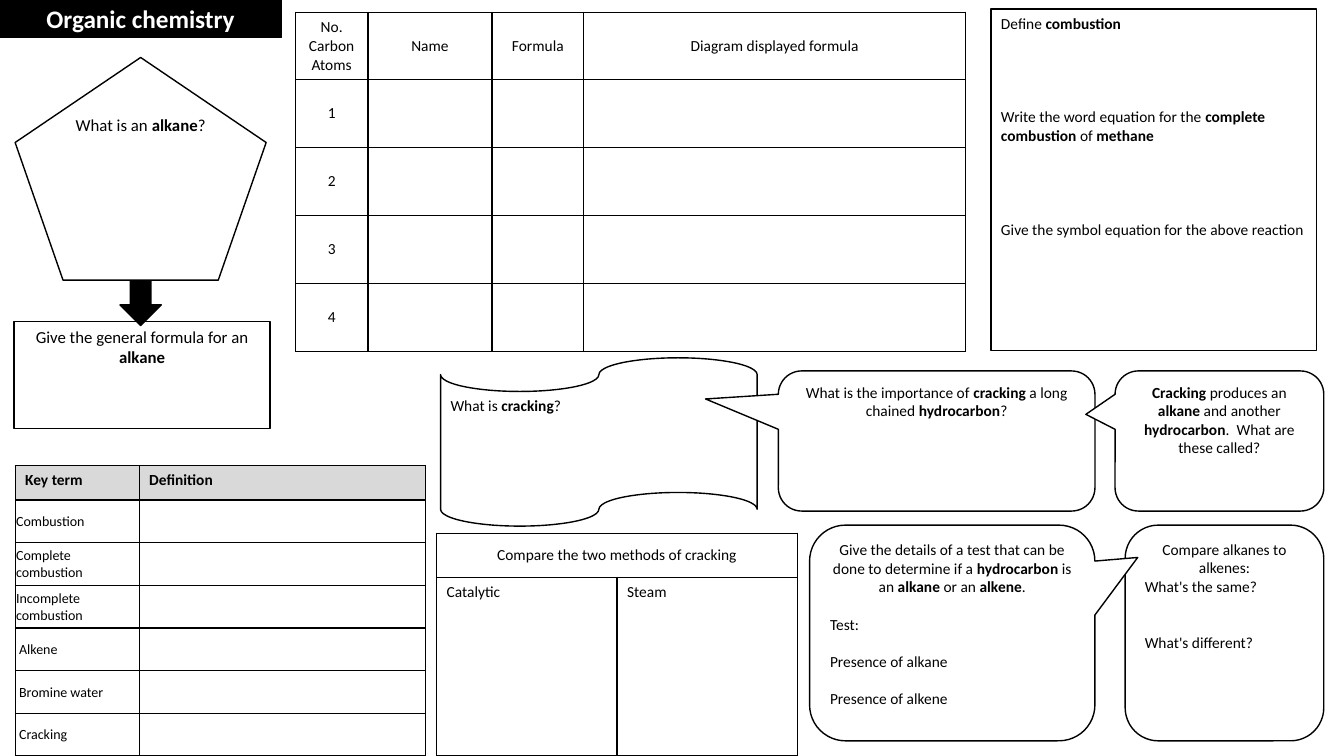
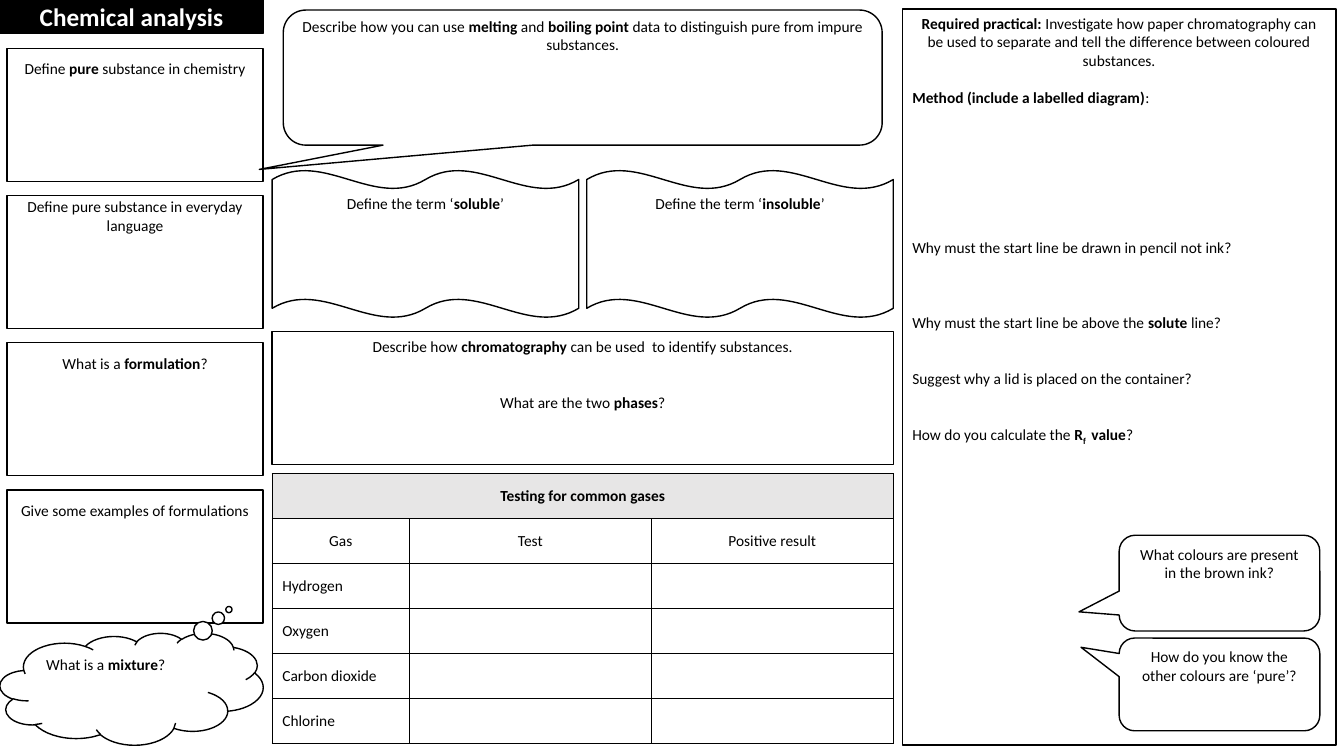
from lxml import etree
from pptx import Presentation
from pptx.dml.color import RGBColor
from pptx.enum.shapes import MSO_SHAPE
from pptx.enum.text import MSO_ANCHOR, MSO_AUTO_SIZE, PP_ALIGN
from pptx.oxml.ns import qn
from pptx.util import Inches, Pt

RECT = MSO_SHAPE.RECTANGLE
ROUND = MSO_SHAPE.ROUNDED_RECTANGLE
CALLOUT = MSO_SHAPE.ROUNDED_RECTANGULAR_CALLOUT
CLOUD = MSO_SHAPE.CLOUD_CALLOUT
WAVE = MSO_SHAPE.DOUBLE_WAVE
TAPE = MSO_SHAPE.FLOWCHART_PUNCHED_TAPE
PENTAGON = MSO_SHAPE.REGULAR_PENTAGON
ARROW = MSO_SHAPE.DOWN_ARROW
LEFT, CENTER = PP_ALIGN.LEFT, PP_ALIGN.CENTER
TOP, MIDDLE = MSO_ANCHOR.TOP, MSO_ANCHOR.MIDDLE

COLORS = {"ink": "000000", "paper": "FFFFFF", "key": "D9D9D9", "gas": "E7E6E6"}
FONT = "Calibri"
BODY = 11
ANSWER_LINE = 13.4  # points of one blank writing line
TITLE_LAYOUT = 5

# Paragraphs are (alignment, blank lines above, text); **bold**, ~subscript~
# Shapes are (preset, box, paragraphs, options)
ORGANIC_SHAPES = [
    (RECT, (0.14, 3.19, 2.54, 1.06),
     [(CENTER, 0, "Give the general formula for an **alkane**")], {"size": 12}),
    (ARROW, (1.19, 2.78, 0.41, 0.45), [], {"fill": "ink"}),
    (PENTAGON, (0.15, 0.57, 2.49, 2.21),
     [(CENTER, 0, "What is an **alkane**?")], {"size": 12}),
    (RECT, (9.83, 0.09, 3.23, 3.39),
     [(LEFT, 0, "Define **combustion**"),
      (LEFT, 4, "Write the word equation for the **complete combustion** of **methane**"),
      (LEFT, 4, "Give the symbol equation for the above reaction")], {}),
    (TAPE, (4.37, 3.55, 3.14, 1.67), [(LEFT, 0, "What is **cracking**?")], {}),
    (CALLOUT, (7.72, 3.68, 3.14, 1.39),
     [(CENTER, 0, "What is the importance of **cracking** a long chained **hydrocarbon**?")],
     {"tail": (-0.73, -0.3)}),
    (CALLOUT, (11.06, 3.68, 2.07, 1.39),
     [(CENTER, 0, "**Cracking** produces an **alkane** and another **hydrocarbon**.  "
                  "What are these called?")],
     {"tail": (-0.64, -0.19)}),
    (ROUND, (11.16, 5.21, 1.97, 2.14),
     [(CENTER, 0, "Compare alkanes to alkenes:"),
      (LEFT, 0, "What's the same?"),
      (LEFT, 2, "What's different?")], {}),
    (CALLOUT, (8.03, 5.21, 2.83, 2.14),
     [(CENTER, 0, "Give the details of a test that can be done to determine if a "
                  "**hydrocarbon** is an **alkane** or an **alkene**."),
      (LEFT, 1, "Test:"),
      (LEFT, 1, "Presence of alkane"),
      (LEFT, 1, "Presence of alkene")], {"tail": (0.65, -0.35)}),
]

DEFINE_BOXES = [  # text, top inset
    ("Define **pure** substance in chemistry", 0.11),
    ("Define pure substance in everyday language", 0.02),
    ("What is a **formulation**?", 0.11),
    ("Give some examples of formulations", 0.11),
]
DEFINE_TOP, DEFINE_PITCH = 0.48, 1.46

ANALYSIS_SHAPES = [
    (RECT, (8.95, 0.09, 4.3, 7.3),
     [(CENTER, 0, "**Required practical: **Investigate how paper chromatography can be used "
                  "to separate and tell the difference between coloured substances."),
      (LEFT, 1, "**Method (include a labelled diagram)**:"),
      (LEFT, 7, "Why must the start line be drawn in pencil not ink?"),
      (LEFT, 3, "Why must the start line be above the **solute** line?"),
      (LEFT, 2, "Suggest why a lid is placed on the container?"),
      (LEFT, 2, "How do you calculate the **R~f ~ value**?")], {}),
] + [
    (RECT, (0.07, DEFINE_TOP + i * DEFINE_PITCH, 2.54, 1.32),
     [(CENTER, 0, text)], {"inset": inset})
    for i, (text, inset) in enumerate(DEFINE_BOXES)
] + [
    (CALLOUT, (2.81, 0.1, 5.94, 1.34),
     [(CENTER, 0, "Describe how you can use **melting** and **boiling point** data to "
                  "distinguish pure from impure substances.")],
     {"tail": (-0.54, 0.68), "inset": 0}),
    (CLOUD, (0, 6.28, 2.61, 1.11), [(LEFT, 0, "What is a **mixture**?")],
     {"tail": (0.37, -0.71)}),
] + [
    (WAVE, (x, 1.69, 3.04, 1.46), [(CENTER, 0, f"Define the term ‘**{term}**’")], {})
    for x, term in ((2.7, "soluble"), (5.82, "insoluble"))
] + [
    (RECT, (2.7, 3.29, 6.16, 1.32),
     [(CENTER, 0, "Describe how **chromatography** can be used  to identify substances."),
      (CENTER, 2, "What are the two **phases**?")], {}),
    (CALLOUT, (11.1, 5.31, 1.99, 0.95),
     [(CENTER, 0, "What colours are present in the brown ink?")], {"tail": (-0.7, 0.3)}),
    (CALLOUT, (11.1, 6.33, 1.99, 0.92),
     [(CENTER, 0, "How do you know the other colours are ‘pure’?")],
     {"tail": (-0.69, -0.4)}),
]

KEY_TERMS = [  # term, left margin
    ("Combustion", 0.01), ("Complete combustion", 0.01), ("Incomplete combustion", 0.01),
    ("Alkene", 0.04), ("Bromine water", 0.04), ("Cracking", 0.04),
]
CARBON_HEADS = ["Name", "Formula", "Diagram displayed formula"]
GASES = ["Hydrogen", "Oxygen", "Carbon dioxide", "Chlorine"]


def rgb(name):
    return RGBColor.from_string(COLORS[name])


def write(tf, paragraphs, size=BODY, color="ink"):
    """Fill a text frame run by run."""
    tf.word_wrap = True
    for i, (align, gap, text) in enumerate(paragraphs):
        p = tf.paragraphs[0] if i == 0 else tf.add_paragraph()
        p.alignment = align
        p.space_before = Pt(gap * ANSWER_LINE)
        for j, chunk in enumerate(text.split("**")):
            for k, piece in enumerate(chunk.split("~")):
                if not piece:
                    continue
                r = p.add_run()
                r.text = piece
                r.font.name, r.font.size = FONT, Pt(size)
                r.font.bold = j % 2 == 1
                r.font.color.rgb = rgb(color)
                if k % 2:
                    r.font._element.set("baseline", "-25000")


def paint(sp, fill):
    sp.fill.solid()
    sp.fill.fore_color.rgb = rgb(fill)
    sp.line.color.rgb = rgb("ink")
    sp.line.width = Pt(1)


def add_worksheet(prs, title, width, height):
    """Add a slide with the black title band in its top left corner."""
    slide = prs.slides.add_slide(prs.slide_layouts[TITLE_LAYOUT])
    sp = slide.shapes.title
    sp.left, sp.top, sp.width, sp.height = 0, 0, Inches(width), Inches(height)
    paint(sp, "ink")
    tf = sp.text_frame
    tf.auto_size = MSO_AUTO_SIZE.NONE
    tf.vertical_anchor = MIDDLE
    write(tf, [(CENTER, 0, f"**{title}**")], 18, "paper")
    return slide


def add_shapes(slide, items):
    for preset, box, paragraphs, options in items:
        sp = slide.shapes.add_shape(preset, *map(Inches, box))
        sp.shadow.inherit = False
        paint(sp, options.get("fill", "paper"))
        for i, value in enumerate(options.get("tail", ())):
            sp.adjustments[i] = value
        if paragraphs:
            tf = sp.text_frame
            tf.vertical_anchor = TOP
            tf.margin_top = Inches(options.get("inset", 0.05))
            write(tf, paragraphs, options.get("size", BODY))


def border(cell):
    tc_pr = cell._tc.get_or_add_tcPr()
    for i, side in enumerate(("a:lnL", "a:lnR", "a:lnT", "a:lnB")):
        ln = etree.Element(qn(side), w=str(Pt(1)))
        fill = etree.SubElement(ln, qn("a:solidFill"))
        etree.SubElement(fill, qn("a:srgbClr"), val=COLORS["ink"])
        tc_pr.insert(i, ln)


def add_grid(slide, left, top, cols, rows):
    """Add a bordered white table and return it."""
    frame = slide.shapes.add_table(len(rows), len(cols), Inches(left), Inches(top),
                                   Inches(sum(cols)), Inches(sum(rows)))
    table = frame.table
    table.first_row = table.horz_banding = False
    for col, width in zip(table.columns, cols):
        col.width = Inches(width)
    for row, height in zip(table.rows, rows):
        row.height = Inches(height)
    for cell in table.iter_cells():
        cell.fill.solid()
        cell.fill.fore_color.rgb = rgb("paper")
        border(cell)
    return table


def put(cell, text, align=CENTER, anchor=MIDDLE, fill="paper", size=BODY):
    cell.vertical_anchor = anchor
    cell.fill.fore_color.rgb = rgb(fill)
    write(cell.text_frame, [(align, 0, line) for line in text.split("\n")], size)


def add_key_terms(slide):
    head = 0.34
    rows = [head] + [(2.88 - head) / len(KEY_TERMS)] * len(KEY_TERMS)
    table = add_grid(slide, 0.15, 4.62, [1.23, 2.84], rows)
    for c, text in enumerate(("Key term", "Definition")):
        put(table.cell(0, c), f"**{text}**", LEFT, TOP, "key")
    for r, (term, margin) in enumerate(KEY_TERMS, 1):
        cell = table.cell(r, 0)
        cell.margin_left = Inches(margin)
        cell.margin_right = cell.margin_top = Inches(0.01)
        cell.margin_bottom = 0
        put(cell, term, LEFT, size=10)


def add_carbon_atoms(slide):
    head, count = 0.67, 4
    rows = [head] + [(3.37 - head) / count] * count
    table = add_grid(slide, 2.93, 0.12, [0.72, 1.23, 0.91, 3.79], rows)
    for c, text in enumerate(["No.\nCarbon Atoms"] + CARBON_HEADS):
        put(table.cell(0, c), text)
    for r in range(1, count + 1):
        put(table.cell(r, 0), str(r))


def add_cracking_methods(slide):
    table = add_grid(slide, 4.33, 5.29, [1.79, 1.79], [0.44, 1.77])
    table.cell(0, 0).merge(table.cell(0, 1))
    put(table.cell(0, 0), "Compare the two methods of cracking")
    for c, text in enumerate(("Catalytic", "Steam")):
        put(table.cell(1, c), text, LEFT, TOP)


def add_gas_tests(slide):
    count = len(GASES) + 2
    table = add_grid(slide, 2.7, 4.7, [1.36, 2.4, 2.4], [2.68 / count] * count)
    table.cell(0, 0).merge(table.cell(0, 2))
    put(table.cell(0, 0), "**Testing for common gases**", fill="gas")
    for c, text in enumerate(("Gas", "Test", "Positive result")):
        put(table.cell(1, c), text)
    for r, gas in enumerate(GASES, 2):
        put(table.cell(r, 0), gas, LEFT)


def main():
    prs = Presentation()
    prs.slide_width, prs.slide_height = Inches(13.33), Inches(7.5)

    # Organic chemistry
    slide = add_worksheet(prs, "Organic chemistry", 2.79, 0.37)
    add_key_terms(slide)
    add_carbon_atoms(slide)
    add_cracking_methods(slide)
    add_shapes(slide, ORGANIC_SHAPES)

    # Chemical analysis
    slide = add_worksheet(prs, "Chemical analysis", 2.61, 0.33)
    add_gas_tests(slide)
    add_shapes(slide, ANALYSIS_SHAPES)

    prs.save("out.pptx")


if __name__ == "__main__":
    main()
